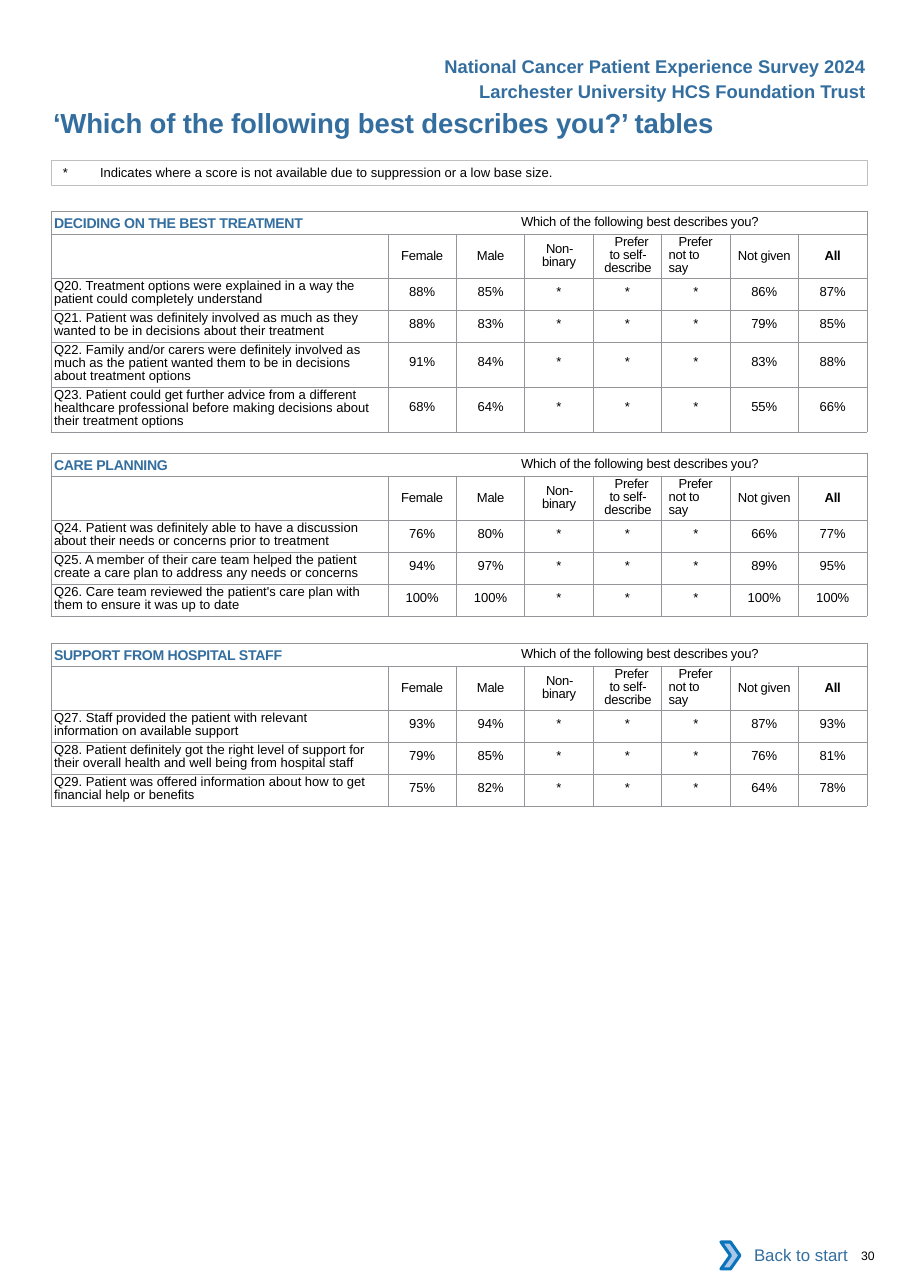
from lxml import etree
from pptx import Presentation
from pptx.dml.color import RGBColor
from pptx.enum.shapes import MSO_SHAPE
from pptx.enum.text import MSO_ANCHOR, MSO_AUTO_SIZE, PP_ALIGN
from pptx.oxml.ns import qn
from pptx.util import Pt

LEFT, CENTER, RIGHT = PP_ALIGN.LEFT, PP_ALIGN.CENTER, PP_ALIGN.RIGHT
TOP, MIDDLE = MSO_ANCHOR.TOP, MSO_ANCHOR.MIDDLE

# Content
TITLE = "‘Which of the following best describes you?’ tables"
BANNER = [
    ("National Cancer Patient Experience Survey 2024", 49),
    ("Larchester University HCS Foundation Trust", 74),
]
NOTE = "*\tIndicates where a score is not available due to suppression or a low base size."
QUESTION = "Which of the following best describes you?"
BACK, PAGE = "Back to start", "30"

# Group label, alignment, left margin, first-line indent, right margin (px)
GROUPS = [
    ("Female", CENTER, 0, 0, 0),
    ("Male", CENTER, 0, 0, 0),
    ("Non- binary", CENTER, 16, 1, 16),
    ("Prefer to self- describe", CENTER, 9, 7, 8),
    ("Prefer not to say", LEFT, 7, 10, 10),
    ("Not given", CENTER, 0, 0, 0),
    ("All", CENTER, 0, 0, 0),
]

# Section heading, top (px), rows of statement, line count, scores
SECTIONS = [
    ("DECIDING ON THE BEST TREATMENT", 211, [
        ("Q20. Treatment options were explained in a way the patient could completely understand",
         2, "88% 85% * * * 86% 87%"),
        ("Q21. Patient was definitely involved as much as they wanted to be in decisions about "
         "their treatment", 2, "88% 83% * * * 79% 85%"),
        ("Q22. Family and/or carers were definitely involved as much as the patient wanted them "
         "to be in decisions about treatment options", 3, "91% 84% * * * 83% 88%"),
        ("Q23. Patient could get further advice from a different healthcare professional before "
         "making decisions about their treatment options", 3, "68% 64% * * * 55% 66%"),
    ]),
    ("CARE PLANNING", 453, [
        ("Q24. Patient was definitely able to have a discussion about their needs or concerns "
         "prior to treatment", 2, "76% 80% * * * 66% 77%"),
        ("Q25. A member of their care team helped the patient create a care plan to address any "
         "needs or concerns", 2, "94% 97% * * * 89% 95%"),
        ("Q26. Care team reviewed the patient's care plan with them to ensure it was up to date",
         2, "100% 100% * * * 100% 100%"),
    ]),
    ("SUPPORT FROM HOSPITAL STAFF", 643, [
        ("Q27. Staff provided the patient with relevant information on available support",
         2, "93% 94% * * * 87% 93%"),
        ("Q28. Patient definitely got the right level of support for their overall health and "
         "well being from hospital staff", 2, "79% 85% * * * 76% 81%"),
        ("Q29. Patient was offered information about how to get financial help or benefits",
         2, "75% 82% * * * 64% 78%"),
    ]),
]

COLORS = {"blue": "336E9F", "black": "000000", "grid": "939598", "note": "BFBFBF",
          "white": "FFFFFF", "arrow": "A8C7E9", "arrow_edge": "0A74BB"}

# Layout in px
SLIDE_W, SLIDE_H = 910, 1288
TABLE_X, TABLE_W, STATEMENT_W = 51, 816, 337
HEADING_H, GROUPS_H = 23, 44
ROW_H = {2: 32, 3: 45}
SCORE_INSET = {2: 7, 3: 13}
BODY, TIGHT = 8.5, 8.6


def px(n):
    return round(n * 914400 / 110.2)


def rgb(name):
    return RGBColor.from_string(COLORS[name])


def style(font, size, color="black", bold=False):
    font.name, font.size, font.bold = "Arial", Pt(size), bold
    font.color.rgb = rgb(color)


def track(paragraph, hundredths):
    for run in paragraph.runs:
        run.font._element.set("spc", str(hundredths))


def indent(paragraph, left, first=0, right=0, tab=None):
    """Set margins; a zero first-line indent stays unset so that tab stops hold."""
    props = paragraph._p.get_or_add_pPr()
    for key, value in (("marL", left), ("marR", right), ("indent", first)):
        if value:
            props.set(key, str(px(value)))
    if tab:
        tabs = etree.SubElement(props, qn("a:tabLst"))
        etree.SubElement(tabs, qn("a:tab"), pos=str(px(tab)), algn="l")


def fill_frame(frame, text, size, color="black", bold=False, align=LEFT,
               anchor=TOP, insets=(0, 0, 0, 0), wrap=True):
    frame.text = text
    frame.word_wrap, frame.vertical_anchor = wrap, anchor
    frame.auto_size = MSO_AUTO_SIZE.NONE
    (frame.margin_left, frame.margin_top,
     frame.margin_right, frame.margin_bottom) = map(px, insets)
    paragraph = frame.paragraphs[0]
    paragraph.alignment = align
    for run in paragraph.runs:
        style(run.font, size, color, bold)
    return paragraph


def fill_cell(cell, text, align=LEFT, anchor=MIDDLE, top=0, bold=False):
    cell.text, cell.vertical_anchor = text, anchor
    cell.margin_left = cell.margin_right = cell.margin_bottom = 0
    cell.margin_top = px(top)
    paragraph = cell.text_frame.paragraphs[0]
    paragraph.alignment = align
    for run in paragraph.runs:
        style(run.font, BODY, bold=bold)
    return paragraph


def frame_cell(cell):
    props = cell._tc.get_or_add_tcPr()
    for side in ("lnL", "lnR", "lnT", "lnB"):
        line = etree.SubElement(props, qn("a:" + side), w=str(Pt(0.5)))
        solid = etree.SubElement(line, qn("a:solidFill"))
        etree.SubElement(solid, qn("a:srgbClr"), val=COLORS["grid"])
    cell.fill.background()


def add_section(slide, heading, top, rows):
    heights = [HEADING_H, GROUPS_H] + [ROW_H[lines] for _, lines, _ in rows]
    table = slide.shapes.add_table(len(heights), len(GROUPS) + 1, px(TABLE_X), px(top),
                                   px(TABLE_W), px(sum(heights))).table
    table.first_row = table.horz_banding = False
    for row, height in zip(table.rows, heights):
        row.height = px(height)
    group_w = (TABLE_W - STATEMENT_W) / len(GROUPS)
    for i, column in enumerate(table.columns):
        column.width = px(group_w if i else STATEMENT_W)
    for cell in table.iter_cells():
        fill_cell(cell, "")
        frame_cell(cell)

    # Heading row
    table.cell(0, 0).merge(table.cell(0, len(GROUPS)))
    paragraph = fill_cell(table.cell(0, 0), heading + "\t")
    paragraph.line_spacing = Pt(11.8)
    indent(paragraph, 3, tab=467)
    heading_font = paragraph.runs[0].font
    style(heading_font, 15.8, "blue", True)
    heading_font._element.set("baseline", "-8000")
    question = paragraph.add_run()
    question.text = QUESTION
    style(question.font, BODY)
    track(paragraph, -15)

    # Group labels
    for c, (label, align, left, first, right) in enumerate(GROUPS, 1):
        paragraph = fill_cell(table.cell(1, c), label, align, bold=label == "All")
        paragraph.line_spacing = Pt(TIGHT) if left else None
        indent(paragraph, left, first, right)
        track(paragraph, -20)

    # Statements and scores
    for r, (statement, lines, scores) in enumerate(rows, 2):
        paragraph = fill_cell(table.cell(r, 0), statement, anchor=TOP, top=2)
        paragraph.line_spacing = Pt(TIGHT)
        indent(paragraph, 3, right=17)
        for c, score in enumerate(scores.split(), 1):
            fill_cell(table.cell(r, c), score, CENTER, TOP, SCORE_INSET[lines])


def add_box(shapes, kind, x, y, w, h, fill=None, line=None, weight=0.5):
    box = shapes.add_shape(kind, px(x), px(y), px(w), px(h))
    box.shadow.inherit = False
    if fill:
        box.fill.solid()
        box.fill.fore_color.rgb = rgb(fill)
    else:
        box.fill.background()
    if line:
        box.line.color.rgb, box.line.width = rgb(line), Pt(weight)
    else:
        box.line.fill.background()
    return box


def main():
    deck = Presentation()
    deck.slide_width, deck.slide_height = px(SLIDE_W), px(SLIDE_H)
    slide = deck.slides.add_slide(deck.slide_layouts[5])
    shapes = slide.shapes

    # Title and banner
    title = shapes.title
    title.left, title.top, title.width, title.height = map(px, (52, 106, 689, 33))
    heading = fill_frame(title.text_frame, TITLE, 18, "blue", True)
    indent(heading, 1)
    track(heading, -10)
    for text, top in BANNER:
        banner = shapes.add_textbox(px(432), px(top), px(445), px(33))
        fill_frame(banner.text_frame, text, 12, "blue", True, RIGHT,
                   insets=(11, 6, 11, 6), wrap=False)

    # Suppression note
    note = add_box(shapes, MSO_SHAPE.RECTANGLE, TABLE_X, 160, TABLE_W, 25, line="note")
    indent(fill_frame(note.text_frame, NOTE, BODY, insets=(0, 5, 0, 4)), 12, tab=37)

    for section, top, rows in SECTIONS:
        add_section(slide, section, top, rows)

    # Back button and page number
    button = shapes.add_group_shape().shapes
    label = add_box(button, MSO_SHAPE.RECTANGLE, 730, 1232, 129, 46, fill="white")
    fill_frame(label.text_frame, BACK, 11, "blue", align=RIGHT, anchor=MIDDLE,
               insets=(11, 6, 11, 6))
    add_box(button, MSO_SHAPE.CHEVRON, 721, 1242, 19, 27, "arrow", "arrow_edge", 2)
    page = shapes.add_textbox(px(850), px(1248), px(56), px(14))
    indent(fill_frame(page.text_frame, PAGE, 8), 11)

    deck.save("out.pptx")


if __name__ == "__main__":
    main()
